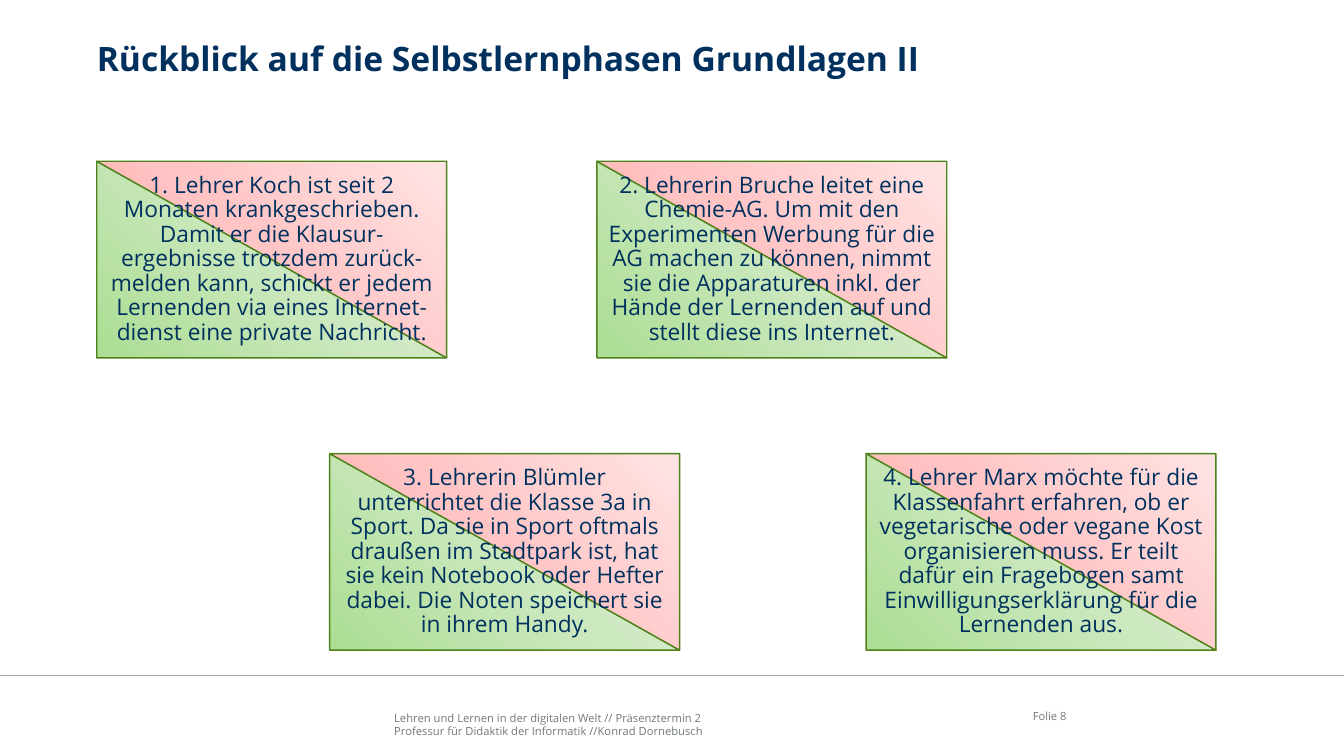
"""Builds the review slide with four case cards on data protection in teaching."""
from lxml import etree
from pptx import Presentation
from pptx.dml.color import RGBColor
from pptx.enum.shapes import MSO_CONNECTOR, MSO_SHAPE
from pptx.enum.text import MSO_ANCHOR, PP_ALIGN
from pptx.oxml import parse_xml
from pptx.oxml.ns import qn
from pptx.util import Inches, Pt

TRIANGLE, STRAIGHT = MSO_SHAPE.RIGHT_TRIANGLE, MSO_CONNECTOR.STRAIGHT
LEFT, CENTER, RIGHT = PP_ALIGN.LEFT, PP_ALIGN.CENTER, PP_ALIGN.RIGHT
TOP, MIDDLE, BOTTOM = MSO_ANCHOR.TOP, MSO_ANCHOR.MIDDLE, MSO_ANCHOR.BOTTOM

TITLE = "Rückblick auf die Selbstlernphasen Grundlagen II"
CARDS = [
    "1. Lehrer Koch ist seit 2 Monaten krankgeschrieben. Damit er die "
    "Klausur-ergebnisse trotzdem zurück-melden kann, schickt er jedem "
    "Lernenden via eines Internet-dienst eine private Nachricht.",
    "2. Lehrerin Bruche leitet eine Chemie-AG. Um mit den Experimenten "
    "Werbung für die AG machen zu können, nimmt sie die Apparaturen inkl. "
    "der Hände der Lernenden auf und stellt diese ins Internet.",
    "3. Lehrerin Blümler unterrichtet die Klasse 3a in Sport. Da sie in "
    "Sport oftmals draußen im Stadtpark ist, hat sie kein Notebook oder "
    "Hefter dabei. Die Noten speichert sie in ihrem Handy.",
    "4. Lehrer Marx möchte für die Klassenfahrt erfahren, ob er vegetarische "
    "oder vegane Kost organisieren muss. Er teilt dafür ein Fragebogen samt "
    "Einwilligungserklärung für die Lernenden aus.",
]
FOOTER = ("Lehren und Lernen in der digitalen Welt // Präsenztermin 2\n"
          "Professur für Didaktik der Informatik //Konrad Dornebusch")
PAGE = "Folie 8"

FONT = "Open Sans"
COLORS = {"navy": "00305E", "grey": "727879", "rule": "A6A6A6", "edge": "4E821A"}
GREEN = ("ACDD93", "CBE8BE", "E5F3E0")
RED = ("FFA0A0", "FFC5C5", "FFE3E3")
LINEAR = '<a:lin ang="18900000" scaled="1"/>'
RADIAL = '<a:path path="circle"><a:fillToRect t="100000" r="100000"/></a:path>'
HALVES = [(GREEN, LINEAR, 0), (RED, RADIAL, 180)]

WIDTH, HEIGHT = 13.33, 7.5
MARGIN = 0.96
CARD_W, CARD_H = 3.47, 1.95
ROW_TOPS = (1.6, 4.5)
ROW_LEFTS = ((MARGIN, 5.92), (3.27, 8.59))
RULE_Y = 6.7


def box(left, top, width, height):
    return [Inches(v) for v in (left, top, width, height)]


def style(tf, size, color, align=LEFT, anchor=TOP, margin=None, bold=False, spacing=None):
    tf.word_wrap = True
    tf.vertical_anchor = anchor
    if margin is not None:
        tf.margin_left = tf.margin_right = tf.margin_top = tf.margin_bottom = margin
    for p in tf.paragraphs:
        p.alignment = align
        p.line_spacing = spacing
        for r in p.runs:
            r.font.size, r.font.name, r.font.bold = Pt(size), FONT, bold
            r.font.color.rgb = RGBColor.from_string(COLORS[color])


def add_text(s, text, place, *args, **kwargs):
    tf = s.shapes.add_textbox(*box(*place)).text_frame
    tf.text = text
    style(tf, *args, **kwargs)


def set_gradient(sp, stops, direction):
    gs = "".join(f'<a:gs pos="{i * 50000}"><a:srgbClr val="{c}"/></a:gs>'
                 for i, c in enumerate(stops))
    fill = parse_xml(
        '<a:gradFill xmlns:a="http://schemas.openxmlformats.org/drawingml/2006/main" '
        f'rotWithShape="1"><a:gsLst>{gs}</a:gsLst>{direction}</a:gradFill>')
    sp._element.spPr.find(qn("a:prstGeom")).addnext(fill)


def add_card(s, place):
    group = s.shapes.add_group_shape()
    for stops, direction, rotation in HALVES:
        sp = group.shapes.add_shape(TRIANGLE, *box(*place))
        sp.rotation = rotation
        sp.shadow.inherit = False
        set_gradient(sp, stops, direction)
        sp.line.color.rgb = RGBColor.from_string(COLORS["edge"])
        sp.line.width = Pt(1)


def main():
    prs = Presentation()
    prs.slide_width, prs.slide_height = Inches(WIDTH), Inches(HEIGHT)
    s = prs.slides.add_slide(prs.slide_layouts[5])

    title = s.shapes.title
    title.left, title.top, title.width, title.height = box(MARGIN, 0.38, 11.57, 0.75)
    title.text_frame.text = TITLE
    style(title.text_frame, 24, "navy", margin=0, bold=True)

    rule = s.shapes.add_connector(STRAIGHT, 0, Inches(RULE_Y), Inches(WIDTH), Inches(RULE_Y))
    rule.line.color.rgb = RGBColor.from_string(COLORS["rule"])
    rule.line.width = Pt(1)
    etree.SubElement(rule._element.spPr, qn("a:effectLst"))

    add_text(s, FOOTER, (3.91, 7.05, 5.67, 0.27), 8, "grey", anchor=BOTTOM, margin=0)
    add_text(s, PAGE, (9.81, 6.9, 0.77, 0.4), 8, "grey", RIGHT, MIDDLE, margin=0)

    places = [(left, top, CARD_W, CARD_H)
              for top, lefts in zip(ROW_TOPS, ROW_LEFTS) for left in lefts]
    for text, place in zip(CARDS, places):
        add_card(s, place)
        add_text(s, text, place, 16.2, "navy", CENTER, MIDDLE, spacing=0.9)

    prs.save("out.pptx")


if __name__ == "__main__":
    main()
